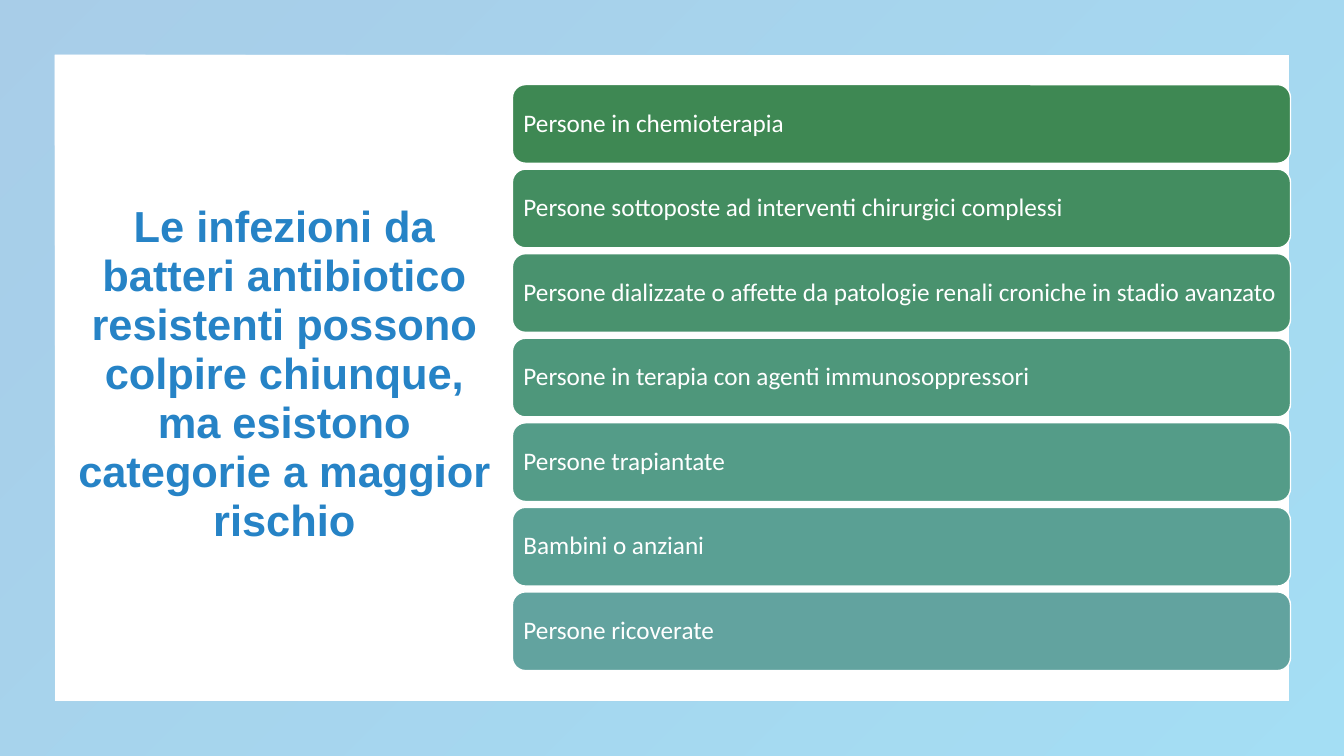
"""Build the slide on the categories most at risk from resistant infections."""
from lxml.etree import SubElement
from pptx import Presentation
from pptx.dml.color import RGBColor
from pptx.enum.shapes import MSO_SHAPE
from pptx.enum.text import MSO_ANCHOR, PP_ALIGN
from pptx.oxml.ns import qn
from pptx.util import Pt

COLORS = {"blue": "2683C6", "cyan": "1CADE4", "white": "FFFFFF"}
BARS = [
    ("Persone in chemioterapia", "3E8853"),
    ("Persone sottoposte ad interventi chirurgici complessi", "438D60"),
    ("Persone dializzate o affette da patologie renali croniche in stadio avanzato", "49926E"),
    ("Persone in terapia con agenti immunosoppressori", "4E977B"),
    ("Persone trapiantate", "549C88"),
    ("Bambini o anziani", "5AA094"),
    ("Persone ricoverate", "62A39F"),
]
TITLE = ("Le infezioni da batteri antibiotico resistenti possono colpire chiunque, "
         "ma esistono categorie a maggior rischio")


def rgb(name):
    return RGBColor.from_string(COLORS.get(name, name))


def write(shape, text, inset, align, spacing, color, **font):
    tf = shape.text_frame
    frame = {"word_wrap": True, "vertical_anchor": MSO_ANCHOR.MIDDLE,
             "margin_left": inset, "margin_right": inset,
             "margin_top": 0, "margin_bottom": 0}
    for key, value in frame.items():
        setattr(tf, key, value)
    p = tf.paragraphs[0]
    p.alignment, p.line_spacing = align, spacing
    r = p.add_run()
    r.text = text
    r.font.color.rgb = rgb(color)
    for key, value in font.items():
        setattr(r.font, key, value)


prs = Presentation()
prs.slide_width, prs.slide_height = Pt(960), Pt(540)
s = prs.slides.add_slide(prs.slide_layouts[6])

border = s.shapes.add_shape(MSO_SHAPE.FRAME, 0, 0, Pt(960), Pt(540))
border.shadow.inherit = False
border.adjustments[0] = 0.072
border.line.fill.background()
border.fill.gradient()
border.fill.gradient_angle = 315
for stop, name in zip(border.fill.gradient_stops, ("blue", "cyan")):
    stop.color.rgb = rgb(name)
for clr in border.element.iter(qn("a:srgbClr")):
    SubElement(clr, qn("a:alpha")).set("val", "40000")

title = s.shapes.add_textbox(Pt(54), Pt(38), Pt(298), Pt(459))
write(title, TITLE, 0, PP_ALIGN.CENTER, 0.94, "blue", name="Arial", size=Pt(31), bold=True)

for i, (text, color) in enumerate(BARS):
    bar = s.shapes.add_shape(MSO_SHAPE.ROUNDED_RECTANGLE,
                             Pt(366), Pt(60.4 + 60.4 * i), Pt(555.8), Pt(56.2))
    bar.shadow.inherit = False
    bar.fill.solid()
    bar.fill.fore_color.rgb = rgb(color)
    bar.line.color.rgb = rgb("white")
    bar.line.width = Pt(1)
    write(bar, text, Pt(5.2), PP_ALIGN.LEFT, 0.9, "white", name="Calibri", size=Pt(18))

prs.save("out.pptx")
